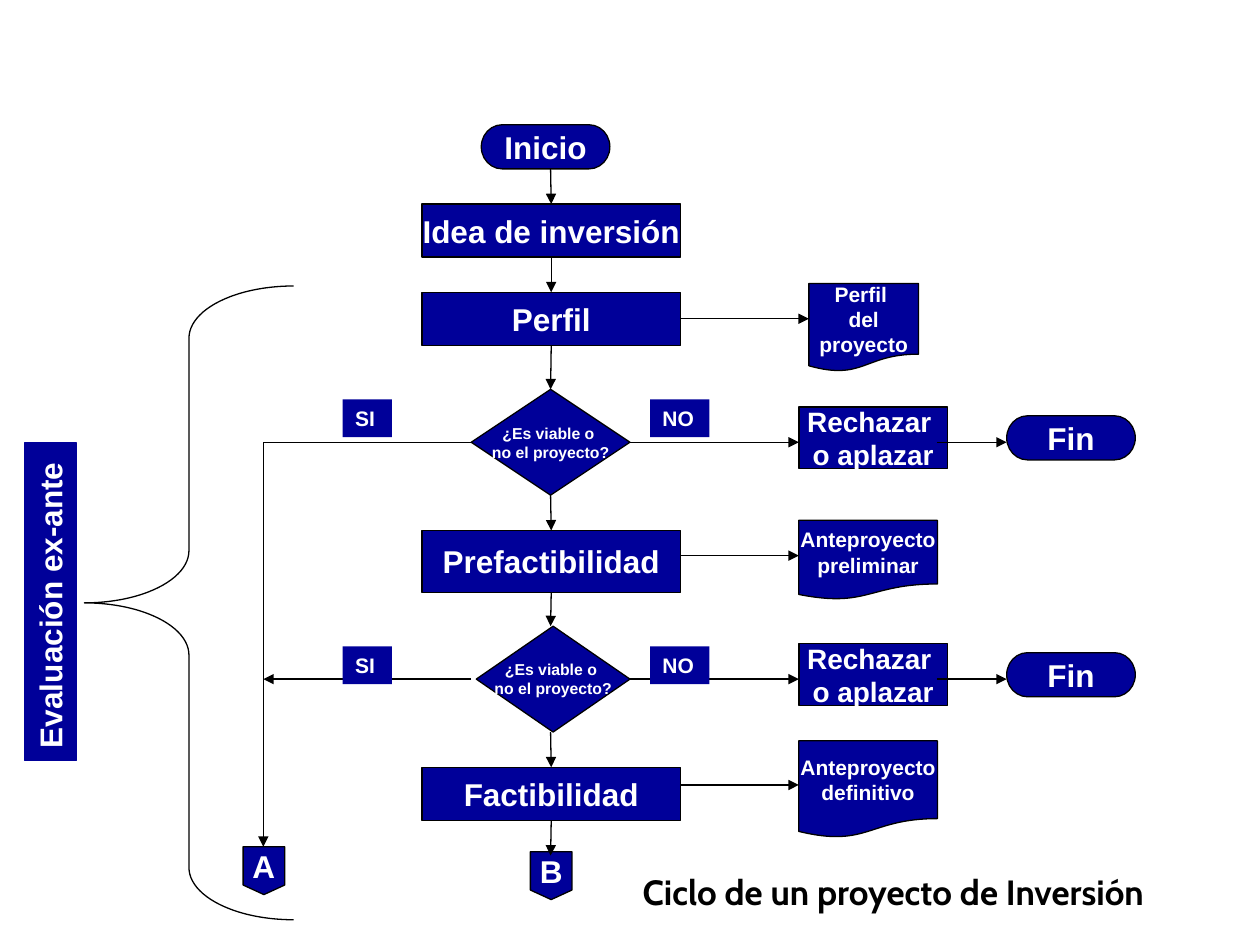
from dataclasses import dataclass

import lxml.etree
import pptx
import pptx.dml.color
import pptx.enum.shapes
import pptx.enum.text
import pptx.oxml.ns
import pptx.util

SCALE = 9144  # EMU in one px, 100 px to the inch
KIND = pptx.enum.shapes.MSO_SHAPE
TOP, LEFT, BOTTOM, RIGHT = range(4)


@dataclass(frozen=True)
class Theme:
    navy: str = "000099"
    black: str = "000000"
    white: str = "FFFFFF"
    body: str = "Arial"
    head: str = "Cabin"
    title: int = 20
    step: int = 18
    verdict: int = 16
    note: int = 12
    query: int = 9
    line: float = 0.75


@dataclass(frozen=True)
class Box:
    x: int
    y: int
    w: int
    h: int

    def inner(self, dx, dy, w, h):
        return Box(self.x + dx, self.y + dy, w, h)

    def emu(self):
        return [v * SCALE for v in (self.x, self.y, self.w, self.h)]


THEME = Theme()


def paint(name):
    return pptx.dml.color.RGBColor.from_string(name)


def stroke(line, color):
    line.color.rgb = paint(color)
    line.width = pptx.util.Pt(THEME.line)


def write(frame, text, size, color, face, align):
    frame.text = text
    for para in frame.paragraphs:
        para.alignment = align
        font = para.font
        font.name, font.size, font.bold = face, pptx.util.Pt(size), True
        font.color.rgb = paint(color)


def node(slide, kind, box, text, size=THEME.step):
    """Outlined flowchart symbol with centred, unwrapped text."""
    shape = slide.shapes.add_shape(kind, *box.emu())
    shape.shadow.inherit = False
    shape.fill.solid()
    shape.fill.fore_color.rgb = paint(THEME.navy)
    stroke(shape.line, THEME.black)
    frame = shape.text_frame
    frame.word_wrap = False
    frame.vertical_anchor = pptx.enum.text.MSO_ANCHOR.MIDDLE
    write(frame, text, size, THEME.white, THEME.body,
          pptx.enum.text.PP_ALIGN.CENTER)
    return shape


def label(slide, box, text, size=THEME.note):
    """Filled caption whose text starts at the top left."""
    shape = slide.shapes.add_shape(KIND.RECTANGLE, *box.emu())
    shape.shadow.inherit = False
    shape.fill.solid()
    shape.fill.fore_color.rgb = paint(THEME.navy)
    shape.line.fill.background()
    frame = shape.text_frame
    frame.word_wrap = True
    frame.vertical_anchor = pptx.enum.text.MSO_ANCHOR.TOP
    write(frame, text, size, THEME.white, THEME.body,
          pptx.enum.text.PP_ALIGN.LEFT)
    return shape


def link(slide, start, end, arrow=True):
    """Each end is a point (x, y) or a joint (shape, side)."""
    ends = [(0, 0) if hasattr(e[0], "shape_id") else e for e in (start, end)]
    wire = slide.shapes.add_connector(
        pptx.enum.shapes.MSO_CONNECTOR.STRAIGHT,
        *[v * SCALE for point in ends for v in point])
    for spot, join in ((start, wire.begin_connect), (end, wire.end_connect)):
        if hasattr(spot[0], "shape_id"):
            join(*spot)
    stroke(wire.line, THEME.black)
    name = pptx.oxml.ns.qn
    props = wire.element.spPr
    if arrow:
        tip = lxml.etree.SubElement(props.find(name("a:ln")),
                                    name("a:tailEnd"))
        tip.set("type", "triangle")
    lxml.etree.SubElement(props, name("a:effectLst"))


def spine(slide, box):
    """Central column of steps; returns both decisions."""
    mid = box.x + 102
    w = box.w
    query = "¿Es viable o \nno el proyecto?"
    node(slide, KIND.FLOWCHART_TERMINATOR, box.inner(47, 0, 102, 35),
         "Inicio")
    idea = node(slide, KIND.RECTANGLE, box.inner(0, 63, w, 42),
                "Idea de inversión")
    brief = node(slide, KIND.RECTANGLE, box.inner(0, 133, w, 42), "Perfil")
    first = node(slide, KIND.FLOWCHART_DECISION, box.inner(39, 210, 126, 84),
                 query, THEME.query)
    draft = node(slide, KIND.RECTANGLE, box.inner(0, 322, w, 49),
                 "Prefactibilidad")
    second = node(slide, KIND.FLOWCHART_DECISION, box.inner(43, 398, 122, 84),
                  query, THEME.query)
    final = node(slide, KIND.RECTANGLE, box.inner(0, 510, w, 42),
                 "Factibilidad")
    node(slide, KIND.FLOWCHART_OFFPAGE_CONNECTOR,
         box.inner(86, 577, 33, 38), "B")
    link(slide, (mid, box.y + 35), (idea, TOP))
    for upper, lower in ((idea, brief), (brief, first), (first, draft)):
        link(slide, (upper, BOTTOM), (lower, TOP))
    link(slide, (draft, BOTTOM), (mid, box.y + 398))
    link(slide, (mid, box.y + 482), (final, TOP))
    link(slide, (final, BOTTOM), (mid, box.y + 580))
    link(slide, (brief, RIGHT), (box.x + 307, box.y + 154))
    for dy in (342, 524):
        link(slide, (box.x + w, box.y + dy), (box.x + 299, box.y + dy))
    return first, second


def papers(slide, box):
    """Documents that the steps produce."""
    for dx, dy, w, h, text in (
            (8, 0, 87, 70, "Perfil \ndel\nproyecto"),
            (0, 188, 110, 63, "Anteproyecto\npreliminar"),
            (0, 363, 110, 77, "Anteproyecto\ndefinitivo")):
        node(slide, KIND.FLOWCHART_DOCUMENT, box.inner(dx, dy, w, h), text,
             THEME.note)


def branch(slide, box, choice, lift):
    """Answers of one decision; box.y is the level of its arrows."""
    link(slide, (choice, RIGHT), (box.x + 425, box.y))
    node(slide, KIND.RECTANGLE, box.inner(425, -28, 118, 49),
         "Rechazar \no aplazar", THEME.verdict)
    node(slide, KIND.FLOWCHART_TERMINATOR, box.inner(590, -21, 102, 35), "Fin")
    link(slide, (box.x + 535, box.y), (box.x + 590, box.y))
    label(slide, box.inner(63, -lift, 39, 30), "SI")
    label(slide, box.inner(307, -lift, 47, 30), "NO")


def bypass(slide, box, choice):
    """Way from both SI answers down to connector A."""
    node(slide, KIND.FLOWCHART_OFFPAGE_CONNECTOR,
         box.inner(-16, box.h, 33, 38), "A")
    link(slide, (choice, LEFT), (box.x, box.y), arrow=False)
    link(slide, (box.x, box.y), (box.x, box.y + box.h))
    link(slide, (box.x + box.w, box.y + 188), (box.x, box.y + 188))


def phase(slide, box):
    """Upright phase name with the brace beside it."""
    name = label(slide, box.inner(-106, 230, 252, 41), "Evaluación ex-ante",
                 THEME.step)
    name.rotation = 270
    stroke(name.line, THEME.navy)
    brace = slide.shapes.add_shape(KIND.LEFT_BRACE,
                                   *box.inner(47, 0, 166, box.h).emu())
    brace.shadow.inherit = False
    brace.adjustments[0] = 0.25
    brace.fill.background()
    stroke(brace.line, THEME.black)


def title(slide, box):
    shape = slide.shapes.title
    shape.left, shape.top, shape.width, shape.height = box.emu()
    frame = shape.text_frame
    frame.word_wrap = True
    frame.auto_size = pptx.enum.text.MSO_AUTO_SIZE.NONE
    frame.vertical_anchor = pptx.enum.text.MSO_ANCHOR.TOP
    write(frame, "Ciclo de un proyecto de Inversión", THEME.title,
          THEME.black, THEME.head, pptx.enum.text.PP_ALIGN.LEFT)


def main():
    deck = pptx.Presentation()
    deck.slide_width, deck.slide_height = 1000 * SCALE, 750 * SCALE
    slide = deck.slides.add_slide(deck.slide_layouts[5])
    title(slide, Box(500, 686, 500, 43))
    first, second = spine(slide, Box(335, 99, 205, 615))
    papers(slide, Box(634, 225, 110, 440))
    bypass(slide, Box(209, 351, 165, 321), first)
    branch(slide, Box(209, 351, 692, 49), first, 34)
    branch(slide, Box(209, 539, 692, 49), second, 26)
    phase(slide, Box(20, 227, 213, 503))
    deck.save("out.pptx")


if __name__ == "__main__":
    main()
